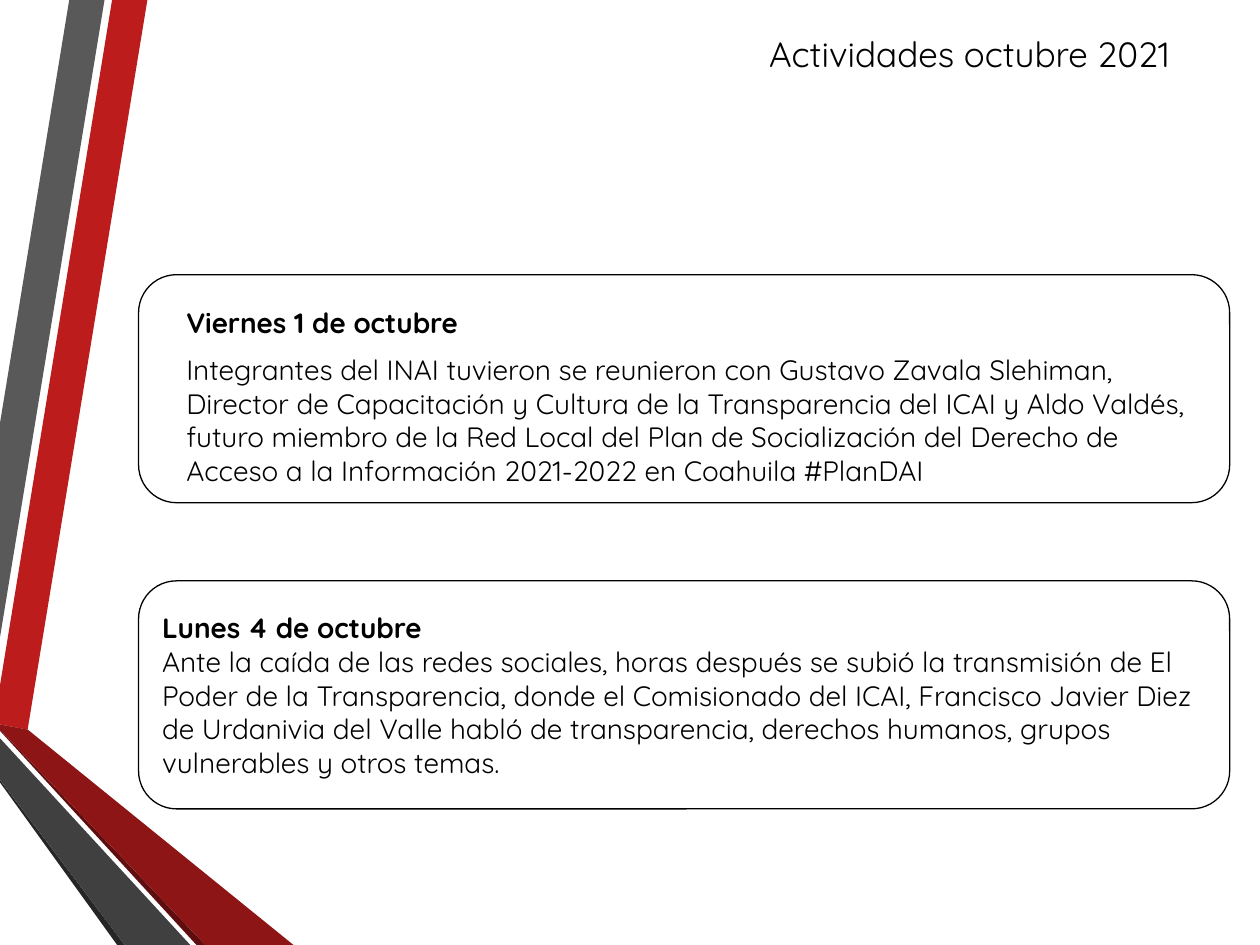
"""Build the October 2021 activities slide."""
from dataclasses import dataclass

from pptx import Presentation
from pptx.dml.color import RGBColor
from pptx.enum.shapes import MSO_SHAPE
from pptx.enum.text import MSO_ANCHOR, MSO_AUTO_SIZE, PP_ALIGN
from pptx.util import Inches, Pt


@dataclass(frozen=True)
class Theme:
    font: str = "Quicksand"
    ink: str = "000000"
    red: str = "BC1C1C"
    wine: str = "8D1515"
    blood: str = "5E0E0E"
    gray: str = "595959"
    dark: str = "404040"
    coal: str = "262626"
    title: int = 20
    body: int = 16
    line: float = 0.75


THEME = Theme()

BANDS = (
    (THEME.red, ((0, 5.44), (0, 5.75), (0.22, 5.79), (1.17, 0), (0.89, 0))),
    (THEME.gray, ((0.83, 0), (0.55, 0), (0, 3.36), (0, 5.06))),
    (THEME.coal, ((0, 6.19), (0, 6.21), (0.93, 7.5), (0.99, 7.5))),
    (THEME.blood, ((0, 5.79), (0, 5.8), (1.56, 7.5), (1.63, 7.5))),
    (THEME.wine, ((0, 5.79), (1.63, 7.5), (2.33, 7.5), (0.22, 5.79), (0, 5.75))),
    (THEME.dark, ((0, 6.19), (0.99, 7.5), (1.51, 7.5), (0, 5.86))),
)

FRIDAY = "Viernes 1 de octubre"
MEETING = (
    "Integrantes del INAI tuvieron se reunieron con Gustavo Zavala Slehiman, "
    "Director de Capacitación y Cultura de la Transparencia del ICAI y Aldo Valdés, "
    "futuro miembro de la Red Local del Plan de Socialización del Derecho de "
    "Acceso a la Información 2021-2022 en Coahuila #PlanDAI"
)
MONDAY = "Lunes 4 de octubre"
TALK = (
    "Ante la caída de las redes sociales, horas después se subió la transmisión de El "
    "Poder de la Transparencia, donde el Comisionado del ICAI, Francisco Javier Diez "
    "de Urdanivia del Valle habló de transparencia, derechos humanos, grupos "
    "vulnerables y otros temas."
)


def add_band(slide, color, points):
    """Draw one closed, filled band through the points."""
    start, *rest = [(Inches(x), Inches(y)) for x, y in points]
    builder = slide.shapes.build_freeform(*start)
    builder.add_line_segments(rest, close=True)
    band = builder.convert_to_shape()
    band.shadow.inherit = False
    band.fill.solid()
    band.fill.fore_color.rgb = RGBColor.from_string(color)
    band.line.fill.background()


def write(para, text, size, bold=False, align=PP_ALIGN.LEFT):
    """Fill a paragraph with text in the theme font."""
    para.text = text
    para.alignment = align
    font = para.font
    font.name, font.size, font.bold = THEME.font, Pt(size), bold
    font.color.rgb = RGBColor.from_string(THEME.ink)


def add_text(slide, box, text, size=THEME.body, **style):
    """Add a wrapping text box with one paragraph."""
    frame = slide.shapes.add_textbox(*map(Inches, box)).text_frame
    frame.word_wrap = True
    frame.auto_size = MSO_AUTO_SIZE.SHAPE_TO_FIT_TEXT
    write(frame.paragraphs[0], text, size, **style)


def add_card(slide, top):
    """Add an outlined rounded card and return its text frame."""
    card = slide.shapes.add_shape(
        MSO_SHAPE.FLOWCHART_ALTERNATE_PROCESS,
        Inches(1.1), Inches(top), Inches(8.66), Inches(1.81))
    card.shadow.inherit = False
    card.fill.background()
    card.line.color.rgb = RGBColor.from_string(THEME.ink)
    card.line.width = Pt(THEME.line)
    frame = card.text_frame
    frame.word_wrap = True
    frame.vertical_anchor = MSO_ANCHOR.MIDDLE
    return frame


def main():
    """Build and save the slide."""
    deck = Presentation()
    deck.slide_width, deck.slide_height = Inches(10), Inches(7.5)
    slide = deck.slides.add_slide(deck.slide_layouts[6])
    for color, points in BANDS:
        add_band(slide, color, points)
    add_text(slide, (5.63, 0.21, 4.13, 0.44), "Actividades octubre 2021",
             THEME.title, align=PP_ALIGN.CENTER)
    add_card(slide, 2.18)
    frame = add_card(slide, 4.61)
    write(frame.paragraphs[0], MONDAY, THEME.body, bold=True)
    write(frame.add_paragraph(), TALK, THEME.body)
    add_text(slide, (1.38, 2.38, 8.19, 0.37), FRIDAY, bold=True)
    add_text(slide, (1.38, 2.75, 8.19, 1.18), MEETING)
    deck.save("out.pptx")


if __name__ == "__main__":
    main()
